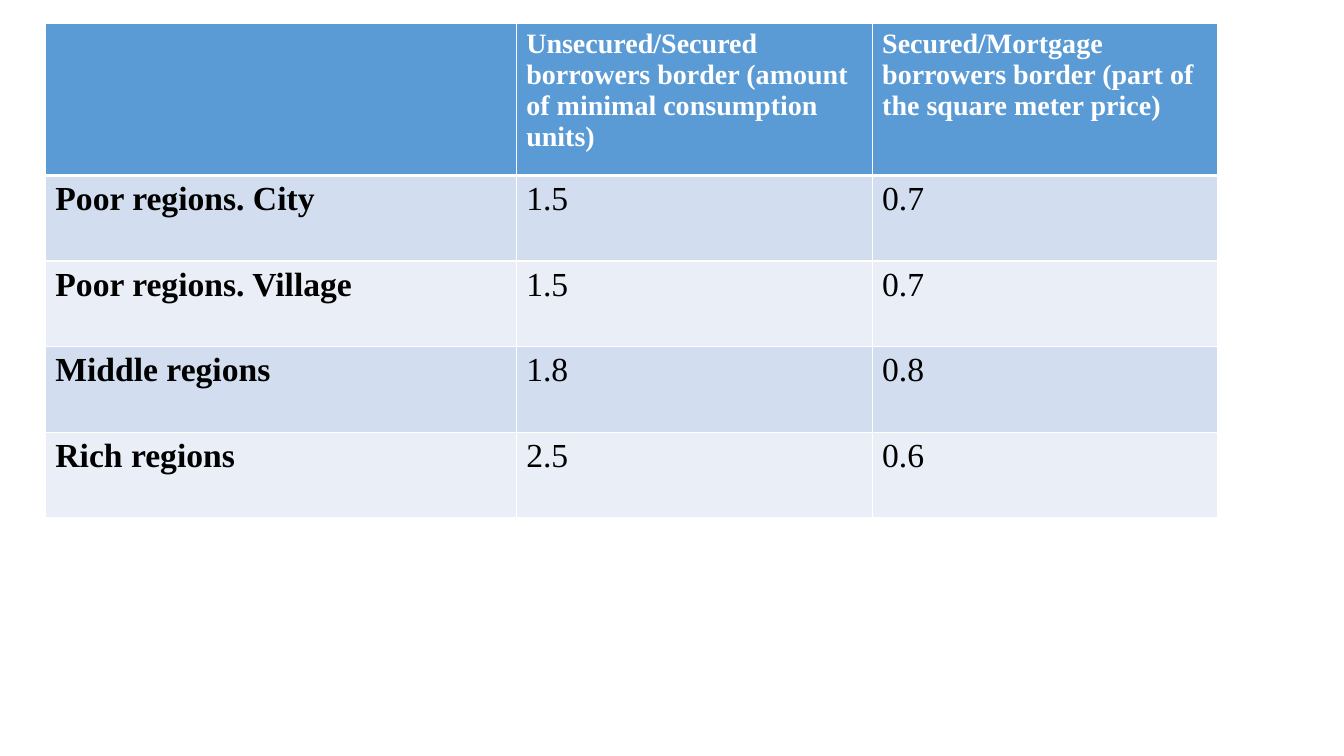
from typing import NamedTuple

from lxml import etree
from pptx import Presentation, util as u
from pptx.dml.color import RGBColor
from pptx.oxml.ns import qn
from pptx.table import _Cell as Cell

PX = 9144  # EMU per px, 100 px to the inch
FONT = "Times New Roman"
COLORS = {
    "head": "5B9BD5",
    "dark": "D2DEEF",
    "light": "EAEFF7",
    "white": "FFFFFF",
    "black": "000000",
}
COLS = [467, 353, 343]
HEAD_H, ROW_H = 151, 85


class Region(NamedTuple):
    name: str
    secured: str
    mortgage: str


HEADS = [
    "",
    "Unsecured/Secured borrowers border (amount of minimal consumption units)",
    "Secured/Mortgage borrowers border (part of the square meter price)",
]
REGIONS = [
    Region("Poor regions. City", "1.5", "0.7"),
    Region("Poor regions. Village", "1.5", "0.7"),
    Region("Middle regions", "1.8", "0.8"),
    Region("Rich regions", "2.5", "0.6"),
]


def px(n: int) -> u.Emu:
    return u.Emu(n * PX)


def rgb(name: str) -> RGBColor:
    return RGBColor.from_string(COLORS[name])


def write(cell: Cell, words: str, *, size: int, color: str, bold: bool) -> None:
    if not words:
        return
    run = cell.text_frame.paragraphs[0].add_run()
    run.text = words
    font = run.font
    font.name, font.size, font.bold = FONT, u.Pt(size), bold
    font.color.rgb = rgb(color)


def edge(cell: Cell, top: int, base: int) -> None:
    """Draw white borders; top and base are widths in points."""
    props = cell._tc.get_or_add_tcPr()
    widths = {"lnL": 1, "lnR": 1, "lnT": top, "lnB": base}
    for i, (tag, width) in enumerate(widths.items()):
        line = etree.Element(qn(f"a:{tag}"), w=str(u.Pt(width)))
        fill = etree.SubElement(line, qn("a:solidFill"))
        etree.SubElement(fill, qn("a:srgbClr"), val=COLORS["white"])
        props.insert(i, line)


def paint(cell: Cell, color: str) -> None:
    cell.fill.solid()
    cell.fill.fore_color.rgb = rgb(color)


def main() -> None:
    prs = Presentation()
    prs.slide_width, prs.slide_height = px(1333), px(750)
    slide = prs.slides.add_slide(prs.slide_layouts[6])

    # Table grid
    rows = [HEADS, *REGIONS]
    high = HEAD_H + ROW_H * len(REGIONS)
    frame = slide.shapes.add_table(
        len(rows), len(COLS), px(45), px(23), px(sum(COLS)), px(high)
    )
    table = frame.table
    for col, wide in zip(table.columns, COLS):
        col.width = px(wide)

    # Header and banded region rows
    for r, row in enumerate(rows):
        head = r == 0
        table.rows[r].height = px(HEAD_H if head else ROW_H)
        band = "head" if head else ("dark" if r % 2 else "light")
        for c, words in enumerate(row):
            cell = table.cell(r, c)
            paint(cell, band)
            edge(cell, top=3 if r == 1 else 1, base=3 if head else 1)
            write(
                cell,
                words,
                size=20 if head else 24,
                color="white" if head else "black",
                bold=head or c == 0,
            )

    prs.save("out.pptx")


if __name__ == "__main__":
    main()
